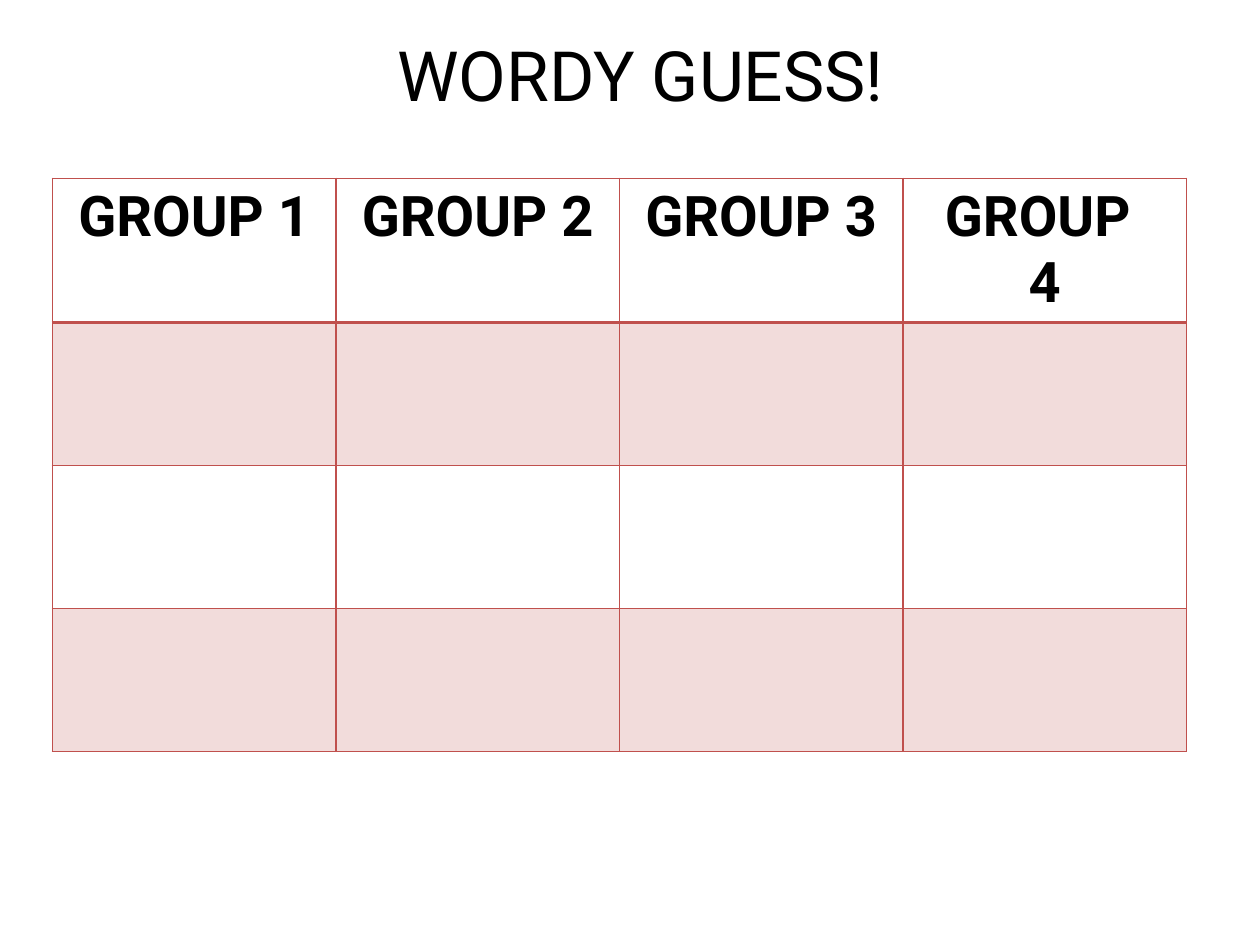
from typing import NamedTuple

from lxml.etree import SubElement
from pptx import Presentation
from pptx.dml.color import RGBColor
from pptx.enum.text import MSO_ANCHOR, PP_ALIGN
from pptx.oxml.ns import qn
from pptx.util import Pt

PX = 9525
FONT = "Roboto"
BLACK = RGBColor(0x00, 0x00, 0x00)
RED = RGBColor(0xC0, 0x50, 0x4D)
ROWS = 4
COL_W, ROW_H = 216, 109


class Column(NamedTuple):
    lines: tuple[str, ...]


class Border(NamedTuple):
    tag: str
    width: int = 1


COLUMNS = [
    Column(("GROUP 1",)),
    Column(("GROUP 2",)),
    Column(("GROUP 3",)),
    Column(("GROUP ", "4")),
]


def px(n: int) -> int:
    return n * PX


def write(tf, *lines: str, size: float, bold: bool = False) -> None:
    for i, line in enumerate(lines):
        p = tf.paragraphs[0] if i == 0 else tf.add_paragraph()
        p.alignment = PP_ALIGN.CENTER
        r = p.add_run()
        r.text = line
        r.font.name = FONT
        r.font.size = Pt(size)
        r.font.bold = bold
        r.font.color.rgb = BLACK


def add_color(parent, color: RGBColor, alpha: int = 100) -> None:
    fill = SubElement(parent, qn("a:solidFill"))
    clr = SubElement(fill, qn("a:srgbClr"), val=str(color))
    if alpha < 100:
        SubElement(clr, qn("a:alpha"), val=str(alpha * 1000))


def format_cell(cell, row: int) -> None:
    pr = cell._tc.get_or_add_tcPr()
    borders = [
        Border("a:lnL"),
        Border("a:lnR"),
        Border("a:lnT", 2 if row == 1 else 1),
        Border("a:lnB", 2 if row == 0 else 1),
    ]
    for b in borders:
        ln = SubElement(pr, qn(b.tag), w=str(Pt(b.width)))
        add_color(ln, RED)
    if row % 2:
        add_color(pr, RED, alpha=20)
    else:
        cell.fill.background()


def add_group_table(s, x: int, y: int) -> None:
    w, h = COL_W * len(COLUMNS), ROW_H * ROWS
    table = s.shapes.add_table(ROWS, len(COLUMNS), px(x), px(y), px(w), px(h)).table
    table.horz_banding = False
    for row in range(ROWS):
        for col in range(len(COLUMNS)):
            format_cell(table.cell(row, col), row)
    for col, column in enumerate(COLUMNS):
        write(table.cell(0, col).text_frame, *column.lines, size=32, bold=True)


def main() -> None:
    prs = Presentation()
    prs.slide_width, prs.slide_height = px(960), px(720)
    s = prs.slides.add_slide(prs.slide_layouts[5])
    title = s.shapes.title
    title.left, title.top, title.width, title.height = map(px, (208, 24, 560, 64))
    title.text_frame.vertical_anchor = MSO_ANCHOR.MIDDLE
    write(title.text_frame, "WORDY GUESS!", size=39.6)
    add_group_table(s, 40, 136)
    prs.save("out.pptx")


if __name__ == "__main__":
    main()
